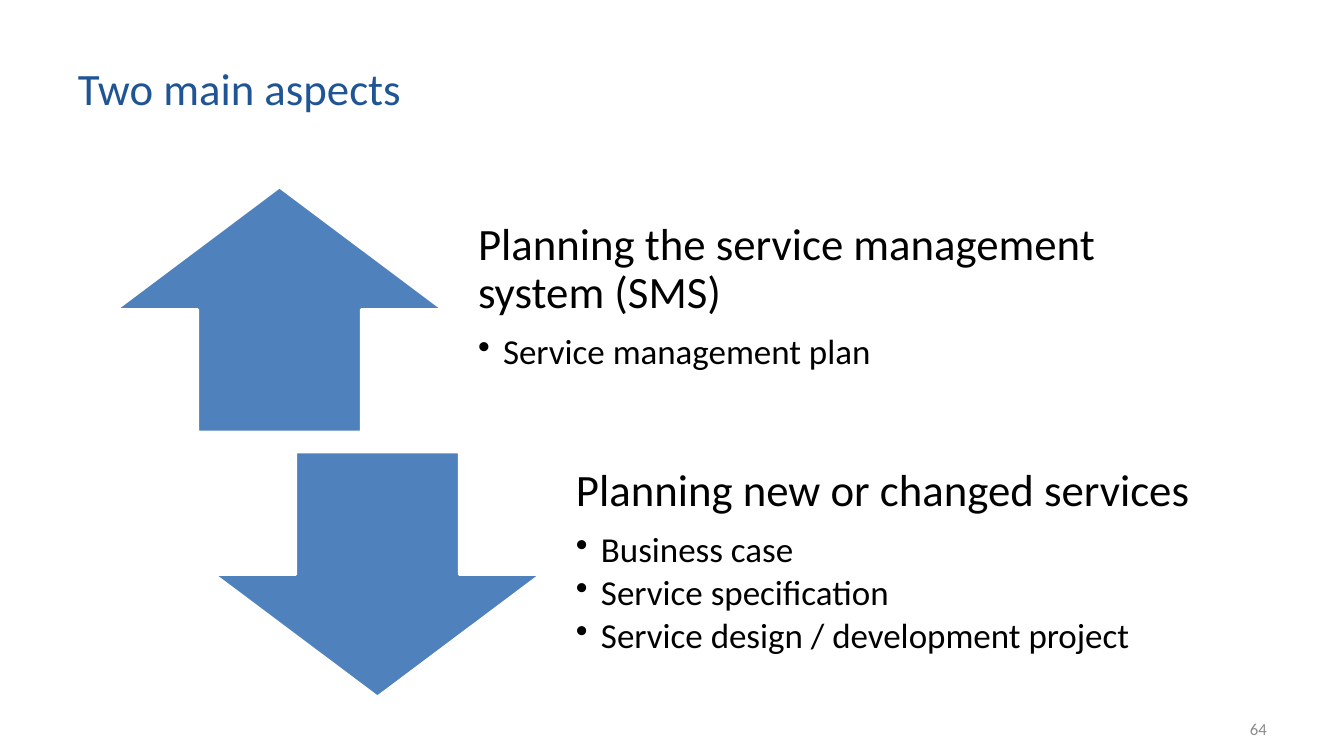
import pptx
import pptx.util
import pptx.dml.color
import pptx.enum.shapes
import pptx.enum.text
import pptx.oxml.ns
import lxml.etree

TITLE = "Two main aspects"
PAGE = "64"
ASPECTS = [
    ("UP_ARROW", "Planning the service management system (SMS)",
     ["Service management plan"]),
    ("DOWN_ARROW", "Planning new or changed services",
     ["Business case", "Service specification", "Service design / development project"]),
]
FONT = "Calibri"
BLUE, BLACK, WHITE, TITLE_BLUE, GREY = "4F81BD", "000000", "FFFFFF", "205595", "8C8C8C"
SLIDE_W, SLIDE_H = 1344, 756
TITLE_BOX = (68, 30, 999, 116)
PAGE_BOX = (964, 709, 313, 40)
ARROW_X, ARROW_Y, ARROW_W, ROW_H = 116, 187, 327, 245
TEXT_X, TEXT_W = 453, 677
STEP_X, STEP_Y = 98, 265
INSET = 25
EMU_PER_PX = 914400 / 100.8
ALIGN = pptx.enum.text.PP_ALIGN


def px(n):
    return pptx.util.Emu(round(n * EMU_PER_PX))


def color(value):
    return pptx.dml.color.RGBColor.from_string(value)


def add_run(p, text, size, hex_color):
    r = p.add_run()
    r.text = text
    r.font.name = FONT
    r.font.size = pptx.util.Pt(size)
    r.font.color.rgb = color(hex_color)


def set_frame(tf, left=10, top=5, right=10, bottom=5):
    tf.word_wrap = True
    tf.auto_size = pptx.enum.text.MSO_AUTO_SIZE.NONE
    tf.vertical_anchor = pptx.enum.text.MSO_ANCHOR.MIDDLE
    tf.margin_left, tf.margin_top = px(left), px(top)
    tf.margin_right, tf.margin_bottom = px(right), px(bottom)


def add_text_box(s, box):
    return s.shapes.add_textbox(*map(px, box)).text_frame


def add_bullet(p):
    p.level = 1
    pPr = p._p.get_or_add_pPr()
    pPr.set("marL", str(px(INSET)))
    pPr.set("indent", str(-px(INSET)))
    bullet = lxml.etree.SubElement(pPr, pptx.oxml.ns.qn("a:buChar"))
    bullet.set("char", "•")


def space(p, after):
    p.alignment = ALIGN.LEFT
    p.line_spacing = 0.9
    p.space_after = pptx.util.Pt(after)


def add_aspect(s, index, arrow, heading, bullets):
    dx, y = index * STEP_X, ARROW_Y + index * STEP_Y
    kind = getattr(pptx.enum.shapes.MSO_SHAPE, arrow)
    sp = s.shapes.add_shape(kind, *map(px, (ARROW_X + dx, y, ARROW_W, ROW_H)))
    sp.shadow.inherit = False
    sp.fill.solid()
    sp.fill.fore_color.rgb = color(BLUE)
    sp.line.color.rgb = color(WHITE)
    sp.line.width = pptx.util.Pt(2)

    tf = add_text_box(s, (TEXT_X + dx, y, TEXT_W, ROW_H))
    set_frame(tf, INSET, 0, INSET, INSET)
    p = tf.paragraphs[0]
    space(p, 11.2)
    add_run(p, heading, 32, BLACK)
    for text in bullets:
        p = tf.add_paragraph()
        add_bullet(p)
        space(p, 3.75)
        add_run(p, text, 25, BLACK)


def main():
    prs = pptx.Presentation()
    prs.slide_width, prs.slide_height = px(SLIDE_W), px(SLIDE_H)
    s = prs.slides.add_slide(prs.slide_layouts[5])

    title = s.shapes.title
    title.left, title.top, title.width, title.height = map(px, TITLE_BOX)
    set_frame(title.text_frame)
    p = title.text_frame.paragraphs[0]
    p.alignment = ALIGN.LEFT
    add_run(p, TITLE, 32, TITLE_BLUE)

    for index, aspect in enumerate(ASPECTS):
        add_aspect(s, index, *aspect)

    tf = add_text_box(s, PAGE_BOX)
    set_frame(tf)
    p = tf.paragraphs[0]
    p.alignment = ALIGN.RIGHT
    add_run(p, PAGE, 12, GREY)

    prs.save("out.pptx")


if __name__ == "__main__":
    main()
